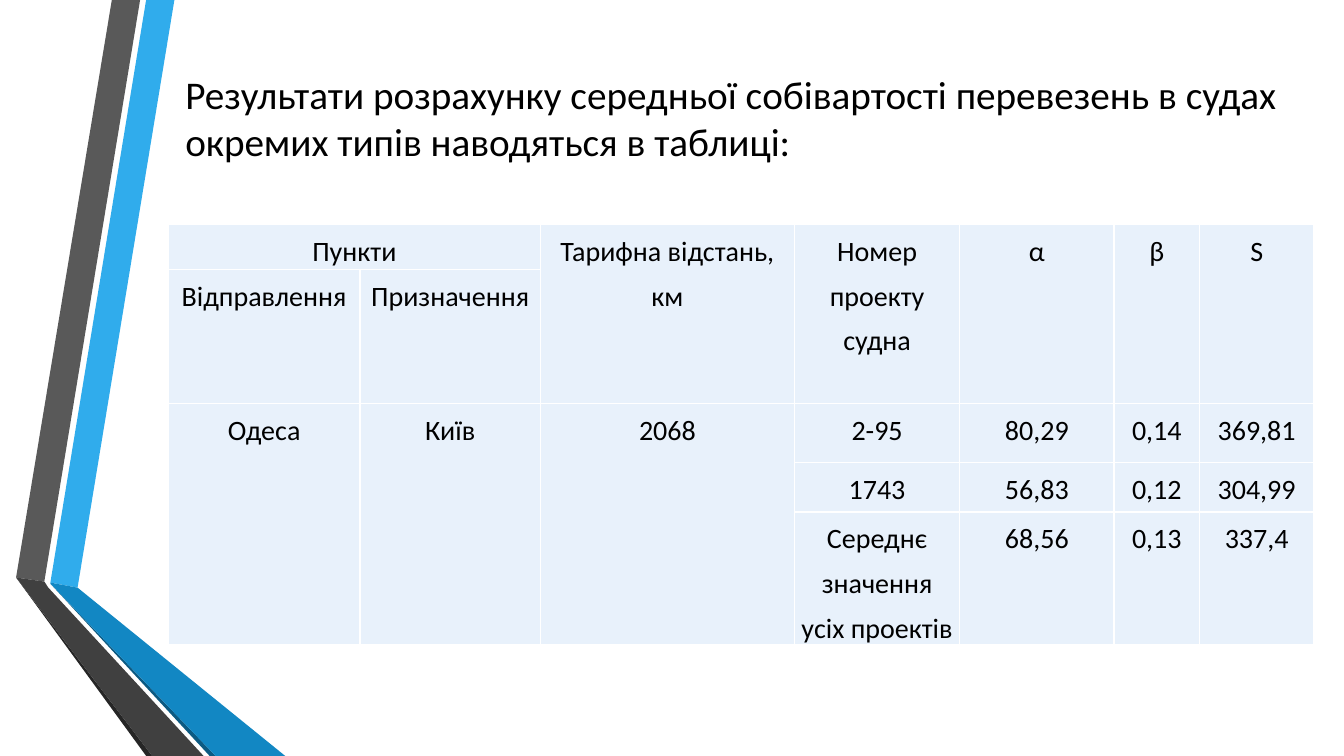
from lxml import etree
from pptx import Presentation
from pptx.dml.color import RGBColor
from pptx.enum import text
from pptx.oxml import ns
from pptx.util import Inches, Pt

FONT, BLACK, WHITE, PALE_BLUE = "Calibri", "000000", "FFFFFF", "E8F1FB"
HEADING = ("Результати розрахунку середньої собівартості перевезень "
           "в судах окремих типів наводяться в таблиці:")

# Ribbon facets: fill and corner points in inches, back to front
RIBBONS = [
    ("30ACEC", [(0.5, 5.78), (0.77, 5.83), (1.73, 0), (1.45, 0)]),
    ("595959", [(1.39, 0), (1.11, 0), (0.16, 5.73), (0.44, 5.77)]),
    ("262626", [(0.16, 5.73), (1.45, 7.5), (1.51, 7.5)]),
    ("0C5A82", [(0.5, 5.79), (2.08, 7.5), (2.14, 7.5)]),
    ("1287C3", [(0.5, 5.79), (2.14, 7.5), (2.83, 7.5), (0.77, 5.83), (0.5, 5.78)]),
    ("404040", [(2.02, 7.5), (0.48, 5.83), (0.44, 5.77), (0.16, 5.73), (1.51, 7.5)]),
]

# Cost table: None marks a cell covered by a merge
COSTS = [
    ["Пункти", None, "Тарифна відстань, км", "Номер проекту судна", "α", "β", "S"],
    ["Відправлення", "Призначення", None, None, None, None, None],
    ["Одеса", "Київ", "2068", "2-95", "80,29", "0,14", "369,81"],
    [None, None, None, "1743", "56,83", "0,12", "304,99"],
    [None, None, None, "Середнє значення усіх проектів", "68,56", "0,13", "337,4"],
]
COLUMN_WIDTHS = [1.9, 1.79, 2.52, 1.64, 1.53, 0.85, 1.13]
ROW_HEIGHTS = [0.44, 1.33, 0.59, 0.49, 1.32]
MERGES = [((0, 0), (0, 1))]
MERGES += [((0, col), (1, col)) for col in range(2, 7)]
MERGES += [((2, col), (4, col)) for col in range(3)]


def rgb(value):
    return RGBColor.from_string(value)


def add_run(paragraph, words, size):
    run = paragraph.add_run()
    run.text = words
    run.font.name, run.font.size = FONT, Pt(size)
    run.font.color.rgb = rgb(BLACK)


def add_borders(cell, color, width):
    properties = cell._tc.get_or_add_tcPr()
    for side in ("a:lnL", "a:lnR", "a:lnT", "a:lnB"):
        line = etree.SubElement(properties, ns.qn(side), w=str(Pt(width)))
        fill = etree.SubElement(line, ns.qn("a:solidFill"))
        etree.SubElement(fill, ns.qn("a:srgbClr"), val=color)


def add_ribbon(slide, color, corners):
    points = [(Inches(x), Inches(y)) for x, y in corners]
    outline = slide.shapes.build_freeform(*points[0])
    outline.add_line_segments(points[1:], close=True)
    ribbon = outline.convert_to_shape()
    ribbon.shadow.inherit = False
    ribbon.fill.solid()
    ribbon.fill.fore_color.rgb = rgb(color)
    ribbon.line.fill.background()


def add_heading(slide):
    box = slide.shapes.add_textbox(Inches(1.74), Inches(0.36), Inches(11.23), Inches(1.6))
    frame = box.text_frame
    frame.word_wrap = True
    frame.vertical_anchor = text.MSO_ANCHOR.MIDDLE
    paragraph = frame.paragraphs[0]
    paragraph.space_before, paragraph.space_after = Pt(5.6), Pt(6)
    add_run(paragraph, HEADING, 28)


def add_costs(slide):
    table = slide.shapes.add_table(
        len(COSTS), len(COLUMN_WIDTHS), Inches(1.67), Inches(2.23),
        Inches(sum(COLUMN_WIDTHS)), Inches(sum(ROW_HEIGHTS))).table
    for column, width in zip(table.columns, COLUMN_WIDTHS):
        column.width = Inches(width)
    for row, height in zip(table.rows, ROW_HEIGHTS):
        row.height = Inches(height)
    for first, last in MERGES:
        table.cell(*first).merge(table.cell(*last))

    for r, row in enumerate(COSTS):
        for c, words in enumerate(row):
            cell = table.cell(r, c)
            cell.margin_left = cell.margin_right = Inches(0.05)
            cell.margin_top = cell.margin_bottom = 0
            add_borders(cell, WHITE, 1)
            cell.fill.solid()
            cell.fill.fore_color.rgb = rgb(PALE_BLUE)
            if words:
                paragraph = cell.text_frame.paragraphs[0]
                paragraph.alignment = text.PP_ALIGN.CENTER
                paragraph.line_spacing = 1.3
                add_run(paragraph, words, 20)


def main():
    deck = Presentation()
    deck.slide_width, deck.slide_height = Inches(13.33), Inches(7.5)
    slide = deck.slides.add_slide(deck.slide_layouts[6])
    for color, corners in RIBBONS:
        add_ribbon(slide, color, corners)
    add_heading(slide)
    add_costs(slide)
    deck.save("out.pptx")


if __name__ == "__main__":
    main()
